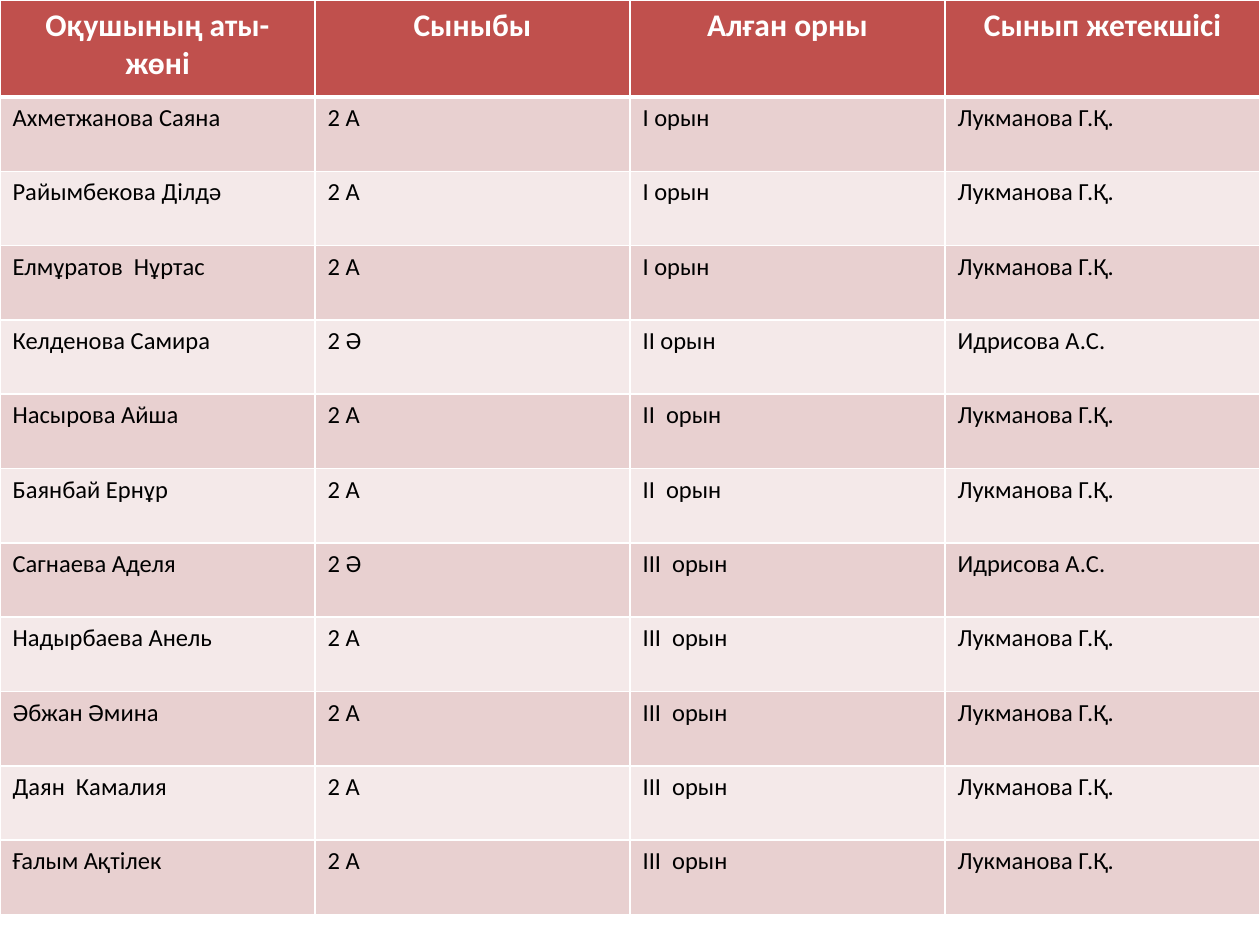
import pptx
import pptx.dml.color
import pptx.enum.text
import pptx.util
from lxml import etree
from pptx.oxml.ns import qn
from pptx.util import Inches

HEADERS = ["Оқушының аты- жөні", "Сыныбы", "Алған орны", "Сынып жетекшісі"]
TEACHERS = {"2 А": "Лукманова Г.Қ.", "2 Ә": "Идрисова А.С."}
PUPILS = [
    ("Ахметжанова Саяна", "2 А", "І орын"),
    ("Райымбекова Ділдә", "2 А", "І орын"),
    ("Елмұратов  Нұртас", "2 А", "І орын"),
    ("Келденова Самира", "2 Ә", "ІІ орын"),
    ("Насырова Айша", "2 А", "ІІ  орын"),
    ("Баянбай Ернұр", "2 А", "ІІ  орын"),
    ("Сагнаева Аделя", "2 Ә", "ІІІ  орын"),
    ("Надырбаева Анель", "2 А", "ІІІ  орын"),
    ("Әбжан Әмина", "2 А", "ІІІ  орын"),
    ("Даян  Камалия", "2 А", "ІІІ  орын"),
    ("Ғалым Ақтілек", "2 А", "ІІІ  орын"),
]


def rgb(value):
    """Turn a hex string into a colour."""
    return pptx.dml.color.RGBColor.from_string(value)


def set_borders(cell, color, widths):
    """Draw the cell's sides with the given widths in points."""
    tc_pr = cell._tc.get_or_add_tcPr()
    for side, width in widths.items():
        ln = etree.SubElement(tc_pr, qn(f"a:ln{side}"), w=str(pptx.util.Pt(width)))
        fill = etree.SubElement(ln, qn("a:solidFill"))
        etree.SubElement(fill, qn("a:srgbClr"), val=color)


def format_cell(cell, text, row):
    """Write a cell and style it as a header or a banded body cell."""
    header = row == 0
    set_borders(cell, "FFFFFF", {"L": 1, "R": 1, "T": 3 if row == 1 else 1, "B": 3 if header else 1})
    cell.fill.solid()
    cell.fill.fore_color.rgb = rgb("C0504D" if header else "E8D0D0" if row % 2 else "F4E9E9")
    cell.text = text
    p = cell.text_frame.paragraphs[0]
    p.alignment = pptx.enum.text.PP_ALIGN.CENTER if header else pptx.enum.text.PP_ALIGN.LEFT
    p.font.name = "Calibri"
    p.font.size = pptx.util.Pt(18 if header else 14)
    p.font.bold = header
    p.font.color.rgb = rgb("FFFFFF" if header else "000000")


def add_results_table(s, left, top, width, header_height, row_height):
    """Place the table of pupils, classes, places and teachers."""
    rows = [HEADERS] + [(name, grade, place, TEACHERS[grade]) for name, grade, place in PUPILS]
    height = header_height + row_height * len(PUPILS)
    table = s.shapes.add_table(len(rows), len(HEADERS), left, top, width, height).table
    for r, texts in enumerate(rows):
        table.rows[r].height = row_height if r else header_height
        for c, text in enumerate(texts):
            format_cell(table.cell(r, c), text, r)


def main():
    """Build the slide and save it."""
    prs = pptx.Presentation()
    prs.slide_width, prs.slide_height = Inches(10), Inches(7.5)
    s = prs.slides.add_slide(prs.slide_layouts[6])
    add_results_table(s, Inches(0), Inches(0), prs.slide_width, Inches(0.77), Inches(0.59))
    prs.save("out.pptx")


if __name__ == "__main__":
    main()
